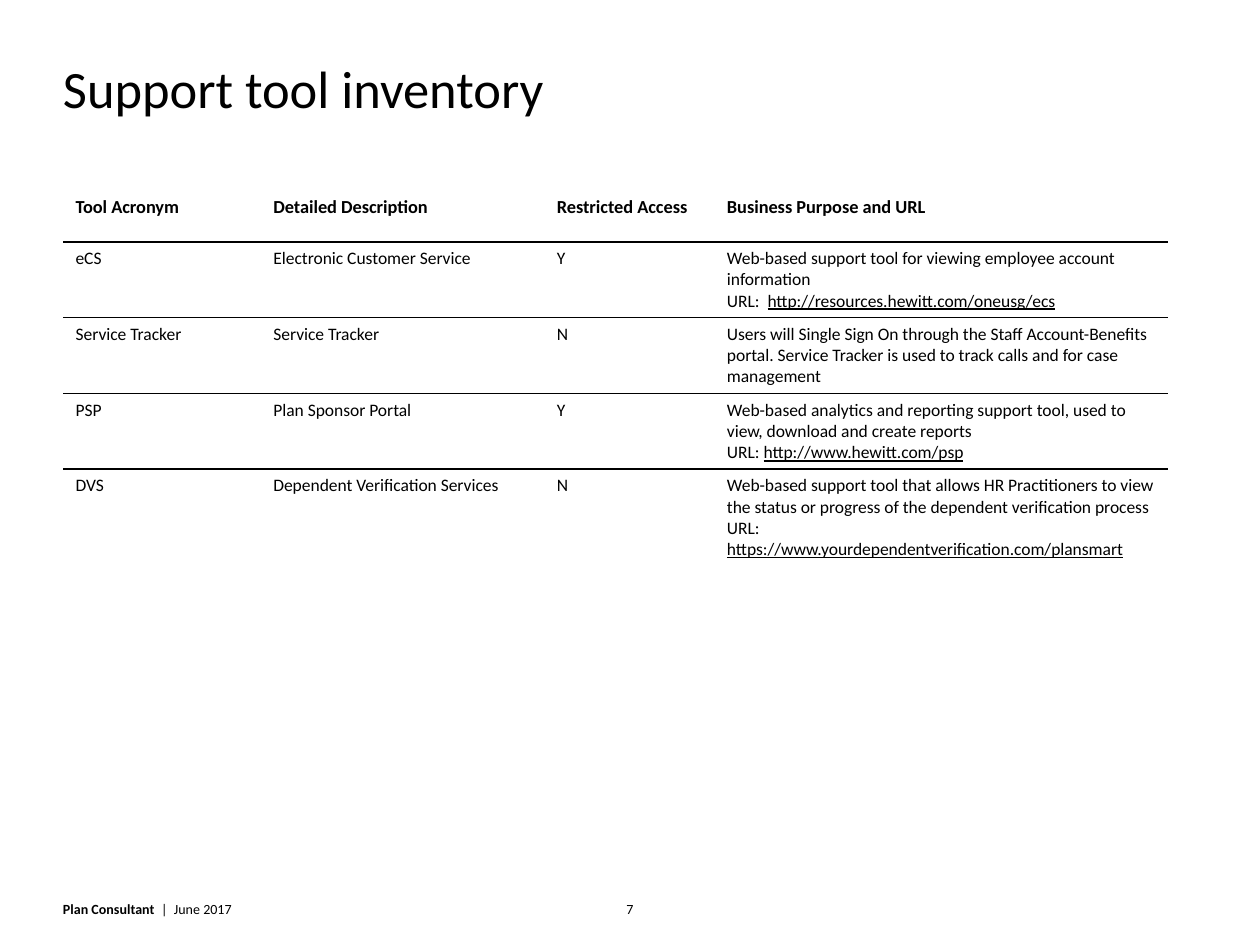
from dataclasses import dataclass

from lxml.etree import SubElement
from pptx import Presentation
from pptx.dml.color import RGBColor
from pptx.enum.text import MSO_ANCHOR, PP_ALIGN
from pptx.oxml import parse_xml
from pptx.oxml.ns import nsdecls, qn
from pptx.util import Inches, Pt

FONT = "Calibri"
BLACK = "000000"
PLAIN_TABLE_STYLE = "{2D5ABB26-0587-4C30-8999-92F81FD0307C}"


@dataclass
class Span:
    text: str
    size: float = 10
    bold: bool = False
    underline: bool = False


@dataclass
class Tool:
    acronym: str
    description: str
    restricted: str
    purpose: str
    url_label: str = ""
    url: str = ""


HEADINGS = ["Tool Acronym", "Detailed Description", "Restricted Access",
            "Business Purpose and URL"]
COLUMN_WIDTHS = [1.57, 2.25, 1.35, 3.6]
HEADER_HEIGHT, ROW_HEIGHT = 0.41, 0.6
TOOLS = [
    Tool("eCS", "Electronic Customer Service", "Y",
         "Web-based support tool for viewing employee account information",
         "URL:  ", "http://resources.hewitt.com/oneusg/ecs"),
    Tool("Service Tracker", "Service Tracker", "N",
         "Users will Single Sign On through the Staff Account-Benefits portal. "
         "Service Tracker is used to track calls and for case management"),
    Tool("PSP", "Plan Sponsor Portal", "Y",
         "Web-based analytics and reporting support tool, used to view, "
         "download and create reports",
         "URL: ", "http://www.hewitt.com/psp"),
    Tool("DVS", "Dependent Verification Services", "N",
         "Web-based support tool that allows HR Practitioners to view the "
         "status or progress of the dependent verification process",
         "URL: ", "https://www.yourdependentverification.com/plansmart"),
]


def color(value: str) -> RGBColor:
    return RGBColor.from_string(value)


def write_spans(para, spans: list[Span]) -> None:
    for span in spans:
        run = para.add_run()
        run.text = span.text
        run.font.name = FONT
        run.font.size = Pt(span.size)
        run.font.bold = span.bold
        run.font.underline = span.underline
        run.font.color.rgb = color(BLACK)


def add_text(page, left: float, top: float, width: float, height: float,
             spans: list[Span], anchor=MSO_ANCHOR.BOTTOM, align=PP_ALIGN.LEFT):
    box = page.shapes.add_textbox(Inches(left), Inches(top), Inches(width), Inches(height))
    frame = box.text_frame
    frame.word_wrap = True
    frame.vertical_anchor = anchor
    frame.margin_left = frame.margin_right = frame.margin_top = frame.margin_bottom = 0
    para = frame.paragraphs[0]
    para.alignment = align
    write_spans(para, spans)
    return para


def add_bottom_rule(cell) -> None:
    rule = parse_xml(f'<a:lnB {nsdecls("a")} w="{Pt(1)}"/>')
    fill = SubElement(rule, qn("a:solidFill"))
    SubElement(fill, qn("a:srgbClr"), val=BLACK)
    cell._tc.get_or_add_tcPr().insert(0, rule)


def fill_cell(cell, lines: list[list[Span]], ruled: bool) -> None:
    cell.fill.background()
    frame = cell.text_frame
    for index, spans in enumerate(lines):
        para = frame.add_paragraph() if index else frame.paragraphs[0]
        write_spans(para, spans)
    if ruled:
        add_bottom_rule(cell)


def tool_cells(tool: Tool) -> list[list[list[Span]]]:
    purpose = [[Span(tool.purpose)]]
    if tool.url:
        purpose.append([Span(tool.url_label), Span(tool.url, underline=True)])
    labels = [tool.acronym, tool.description, tool.restricted]
    return [[[Span(label)]] for label in labels] + [purpose]


def add_inventory(page, left: float, top: float) -> None:
    rows = [[[[Span(heading, 10.5, bold=True)]] for heading in HEADINGS]]
    rows += [tool_cells(tool) for tool in TOOLS]
    heights = [HEADER_HEIGHT] + [ROW_HEIGHT] * len(TOOLS)
    table = page.shapes.add_table(
        len(rows), len(HEADINGS), Inches(left), Inches(top),
        Inches(sum(COLUMN_WIDTHS)), Inches(sum(heights))).table
    table.horz_banding = False
    table._tbl.tblPr.find(qn("a:tableStyleId")).text = PLAIN_TABLE_STYLE
    for column, width in zip(table.columns, COLUMN_WIDTHS):
        column.width = Inches(width)
    for row_index, (cells, height) in enumerate(zip(rows, heights)):
        table.rows[row_index].height = Inches(height)
        for column_index, lines in enumerate(cells):
            fill_cell(table.cell(row_index, column_index), lines,
                      ruled=row_index < len(rows) - 1)


def main() -> None:
    deck = Presentation()
    deck.slide_width, deck.slide_height = Inches(10), Inches(7.5)
    page = deck.slides.add_slide(deck.slide_layouts[6])

    # Footer and page number
    add_text(page, 0.5, 7.15, 8.16, 0.13,
             [Span("Plan Consultant  ", 8, bold=True), Span("|  June 2017", 8)])
    add_text(page, 4.74, 7.15, 0.52, 0.13, [Span("7", 8)], align=PP_ALIGN.CENTER)

    # Title
    title = add_text(page, 0.5, 0.5, 9, 0.99, [Span("Support tool inventory", 30)],
                     anchor=MSO_ANCHOR.TOP)
    title.line_spacing = Pt(32)

    # Tool table
    add_inventory(page, 0.5, 1.51)

    deck.save("out.pptx")


if __name__ == "__main__":
    main()
